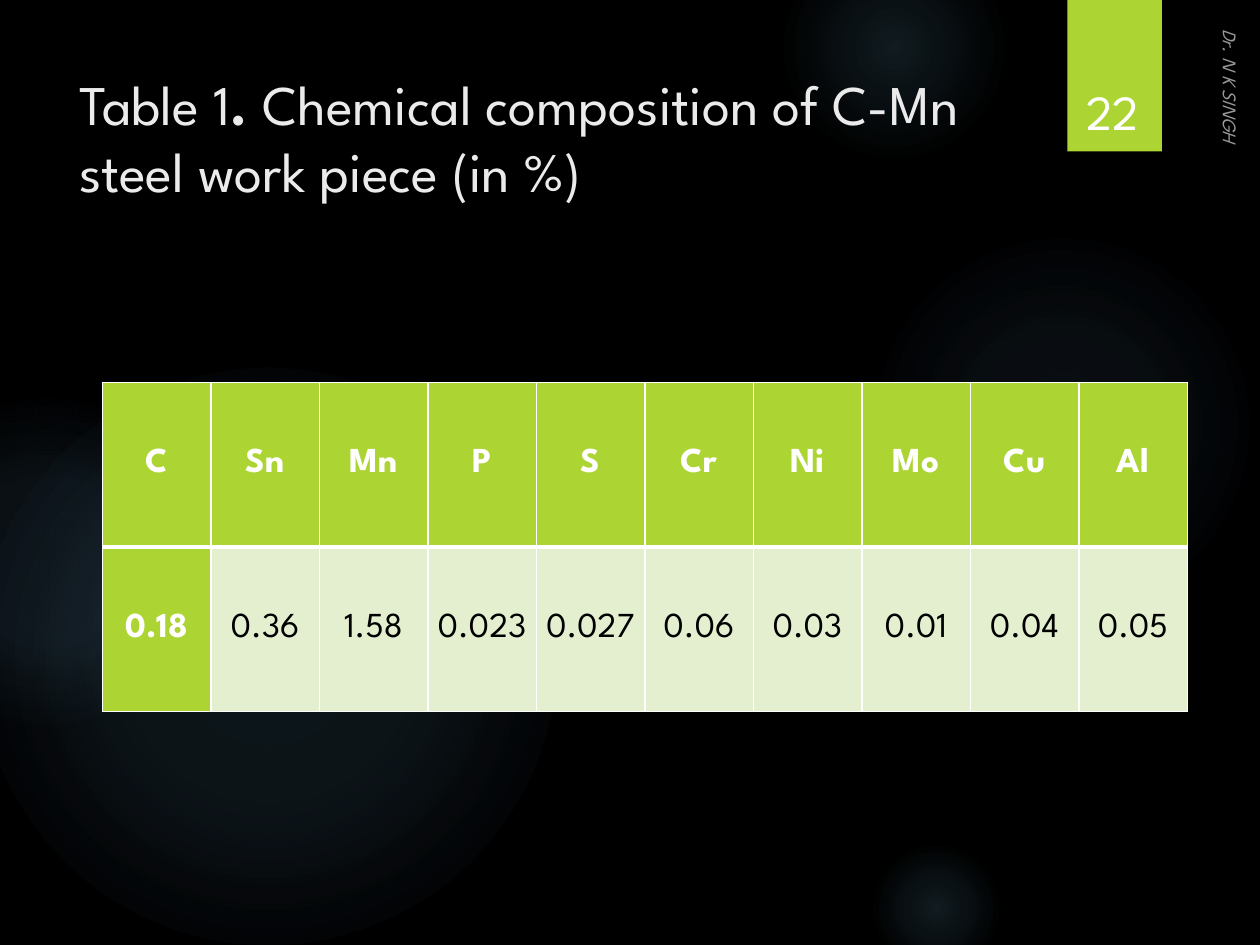
import pptx
import pptx.dml.color
import pptx.enum.shapes
import pptx.enum.text
import pptx.oxml
import pptx.oxml.ns
import pptx.util

Pt = pptx.util.Pt
RGBColor = pptx.dml.color.RGBColor
MSO_SHAPE = pptx.enum.shapes.MSO_SHAPE
MSO_ANCHOR = pptx.enum.text.MSO_ANCHOR
PP_ALIGN = pptx.enum.text.PP_ALIGN

BLACK = RGBColor(0x00, 0x00, 0x00)
WHITE = RGBColor(0xFF, 0xFF, 0xFF)
LIGHT_GRAY = RGBColor(0xEB, 0xEB, 0xEB)
GREEN = RGBColor(0xAC, 0xD4, 0x33)
PALE_GREEN = RGBColor(0xE3, 0xEF, 0xCE)
GLOW_BLUE = RGBColor(0x7A, 0xC4, 0xF0)
FONT = "League Spartan"
NAMESPACE = pptx.oxml.ns.nsdecls("a")

GLOWS = [
    ((496, 132, 222), [(0, 7), (36, 6), (69, 0)]),
    ((448, -36, 126), [(0, 14), (36, 7), (73, 0)]),
    ((496, 480, 78), [(0, 14), (36, 7), (66, 0)]),
    ((-12, 210, 330), [(0, 11), (36, 10), (75, 0)]),
    ((-66, 228, 186), [(0, 8), (36, 8), (72, 0)]),
]
COMPOSITION = {
    "C": "0.18", "Sn": "0.36", "Mn": "1.58", "P": "0.023", "S": "0.027",
    "Cr": "0.06", "Ni": "0.03", "Mo": "0.01", "Cu": "0.04", "Al": "0.05",
}


def set_font(font, size, color, bold=False, italic=False):
    font.name = FONT
    font.size = Pt(size)
    font.color.rgb = color
    font.bold = bold
    font.italic = italic


def place(shape, box):
    shape.left, shape.top, shape.width, shape.height = map(Pt, box)


def add_glow(slide, circle, stops):
    left, top, diameter = circle
    shape = slide.shapes.add_shape(
        MSO_SHAPE.OVAL, Pt(left), Pt(top), Pt(diameter), Pt(diameter))
    shape.shadow.inherit = False
    shape.line.fill.background()
    stop_xml = "".join(
        f'<a:gs pos="{position * 1000}"><a:srgbClr val="{GLOW_BLUE}">'
        f'<a:alpha val="{opacity * 1000}"/></a:srgbClr></a:gs>'
        for position, opacity in stops)
    gradient = pptx.oxml.parse_xml(
        f'<a:gradFill {NAMESPACE} rotWithShape="1"><a:gsLst>{stop_xml}</a:gsLst>'
        '<a:path path="circle"><a:fillToRect l="50000" t="50000" r="50000" b="50000"/>'
        '</a:path></a:gradFill>')
    geometry = shape.element.spPr.find(pptx.oxml.ns.qn("a:prstGeom"))
    geometry.addnext(gradient)


def add_text(slide, box, text):
    shape = slide.shapes.add_textbox(*map(Pt, box))
    shape.text_frame.word_wrap = True
    shape.text_frame.vertical_anchor = MSO_ANCHOR.BOTTOM
    paragraph = shape.text_frame.paragraphs[0]
    paragraph.text = text
    return shape, paragraph


def add_page_tab(slide, box):
    left, top, width, height = box
    tab = slide.shapes.add_shape(MSO_SHAPE.RECTANGLE, *map(Pt, box))
    tab.shadow.inherit = False
    tab.fill.solid()
    tab.fill.fore_color.rgb = GREEN
    tab.line.fill.background()
    number_box = (left + 1, top + 23, width - 4, height - 26)
    _, paragraph = add_text(slide, number_box, "22")
    paragraph.alignment = PP_ALIGN.CENTER
    set_font(paragraph.font, 28, WHITE)


def add_author(slide, box):
    shape, paragraph = add_text(slide, box, "Dr. N K SINGH")
    shape.rotation = 90
    run = paragraph.runs[0]
    set_font(run.font, 11, WHITE, italic=True)
    color = run.font.fill._xPr.find(".//" + pptx.oxml.ns.qn("a:srgbClr"))
    color.append(pptx.oxml.parse_xml(f'<a:alpha {NAMESPACE} val="60000"/>'))


def add_title(slide, box):
    title = slide.shapes.title
    slide.shapes.element.append(title.element)
    place(title, box)
    frame = title.text_frame
    frame.word_wrap = True
    frame.auto_size = pptx.enum.text.MSO_AUTO_SIZE.NONE
    frame.vertical_anchor = MSO_ANCHOR.TOP
    paragraph = frame.paragraphs[0]
    paragraph.alignment = PP_ALIGN.LEFT
    set_font(paragraph.font, 32, LIGHT_GRAY)
    for text, bold in [("Table 1", False), (". ", True),
                       ("Chemical composition of C-Mn steel work piece (in %)", False)]:
        run = paragraph.add_run()
        run.text = text
        run.font.bold = bold


def set_borders(cell, widths):
    properties = cell._tc.get_or_add_tcPr()
    for index, (side, width) in enumerate(widths.items()):
        properties.insert(index, pptx.oxml.parse_xml(
            f'<a:ln{side} {NAMESPACE} w="{Pt(width)}"><a:solidFill>'
            f'<a:srgbClr val="{WHITE}"/></a:solidFill></a:ln{side}>'))


def add_composition_table(slide, box):
    rows = [list(COMPOSITION), list(COMPOSITION.values())]
    table = slide.shapes.add_table(len(rows), len(rows[0]), *map(Pt, box)).table
    table.first_col = True
    table.horz_banding = False
    for row_index, values in enumerate(rows):
        for column_index, value in enumerate(values):
            cell = table.cell(row_index, column_index)
            emphasized = row_index == 0 or column_index == 0
            cell.fill.solid()
            cell.fill.fore_color.rgb = GREEN if emphasized else PALE_GREEN
            cell.vertical_anchor = MSO_ANCHOR.MIDDLE
            cell.margin_left = cell.margin_right = Pt(5)
            cell.margin_top = cell.margin_bottom = Pt(0)
            paragraph = cell.text_frame.paragraphs[0]
            paragraph.text = value
            paragraph.alignment = PP_ALIGN.CENTER
            set_font(paragraph.font, 20, WHITE if emphasized else BLACK, bold=emphasized)
            is_header = row_index == 0
            set_borders(cell, {"L": 1, "R": 1, "T": 1 if is_header else 3,
                               "B": 3 if is_header else 1})


def main():
    presentation = pptx.Presentation()
    presentation.slide_width = Pt(720)
    presentation.slide_height = Pt(540)
    slide = presentation.slides.add_slide(presentation.slide_layouts[5])
    slide.background.fill.solid()
    slide.background.fill.fore_color.rgb = BLACK
    for circle, stops in GLOWS:
        add_glow(slide, circle, stops)
    add_page_tab(slide, (610, 0, 54, 86.5))
    add_title(slide, (38, 36, 556, 110))
    add_composition_table(slide, (58.5, 218.5, 620, 188))
    add_author(slide, (550, 152.5, 304, 18))
    presentation.save("out.pptx")


if __name__ == "__main__":
    main()
